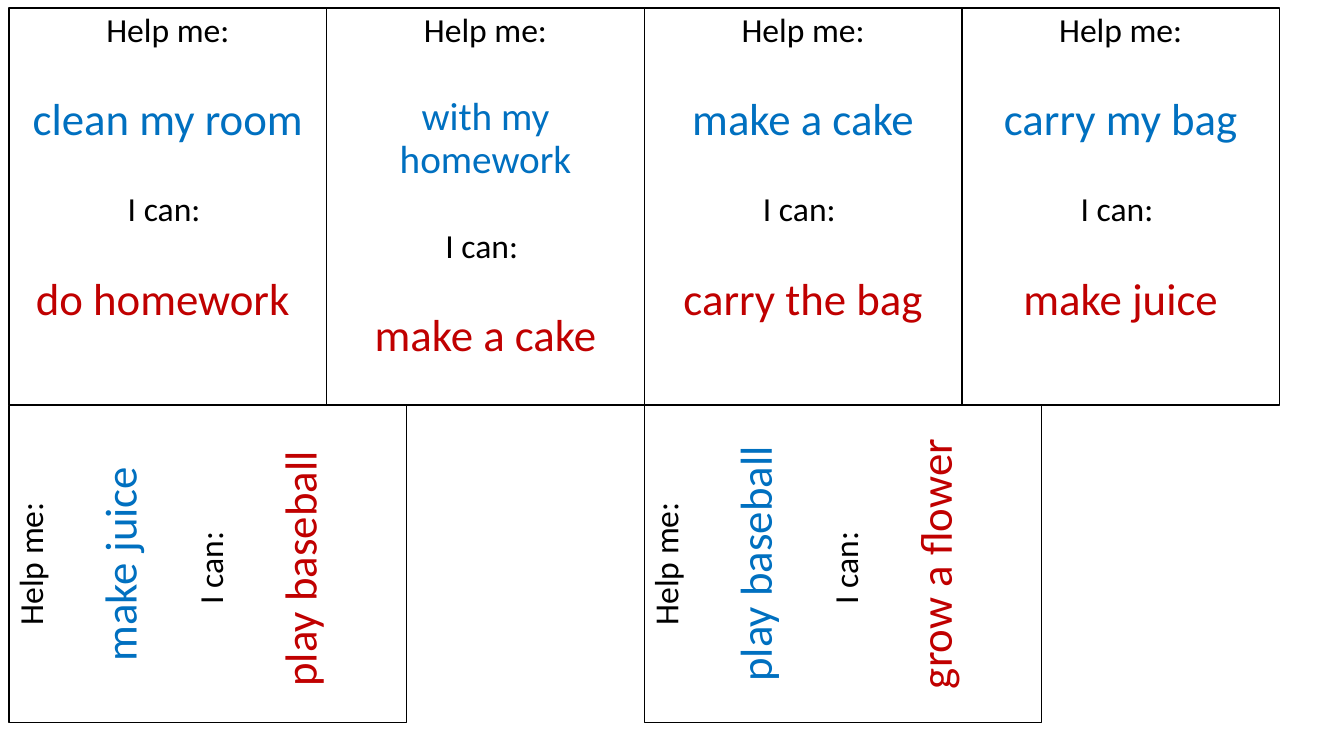
import pptx
import pptx.util
import pptx.dml.color
import pptx.enum.shapes
import pptx.enum.text

Inches = pptx.util.Inches
Pt = pptx.util.Pt

COLORS = {"paper": "FFFFFF", "ink": "000000", "request": "0070C0", "offer": "C00000"}

UPRIGHT_CARDS = [
    ("clean my room", 32, "do homework "),
    ("with my homework", 28, "make a cake"),
    ("make a cake", 32, "carry the bag"),
    ("carry my bag", 32, "make juice"),
]
TURNED_CARDS = [
    ("make juice", 32, "play baseball "),
    ("play baseball", 32, "grow a flower"),
]

LEFT, TOP = 0.09, 0.08
CARD_WIDTH, CARD_HEIGHT = 3.15, 3.94
TURN_SHIFT = (CARD_HEIGHT - CARD_WIDTH) / 2

FRAME_FORMAT = {
    "word_wrap": True,
    "auto_size": pptx.enum.text.MSO_AUTO_SIZE.NONE,
    "vertical_anchor": pptx.enum.text.MSO_ANCHOR.TOP,
}
LINE_FORMAT = {"alignment": pptx.enum.text.PP_ALIGN.CENTER, "line_spacing": 0.9}


def apply_format(target, values):
    for name, value in values.items():
        setattr(target, name, value)


def rgb(name):
    return pptx.dml.color.RGBColor.from_string(COLORS[name])


def add_card(slide, left, top, rotation, request, request_size, offer):
    card = slide.shapes.add_shape(
        pptx.enum.shapes.MSO_SHAPE.RECTANGLE,
        Inches(left), Inches(top), Inches(CARD_WIDTH), Inches(CARD_HEIGHT),
    )
    card.rotation = rotation
    card.shadow.inherit = False
    card.fill.solid()
    card.fill.fore_color.rgb = rgb("paper")
    card.line.color.rgb = rgb("ink")
    card.line.width = Pt(1)
    apply_format(card.text_frame, FRAME_FORMAT)

    wording = [
        ("Help me:", 24, "ink"),
        (request, request_size, "request"),
        ("I can: ", 24, "ink"),
        (offer, 32, "offer"),
    ]
    for index, (words, size, color) in enumerate(wording):
        line = card.text_frame.add_paragraph() if index else card.text_frame.paragraphs[0]
        apply_format(line, LINE_FORMAT | {"space_before": Pt(34 if index else 0)})
        run = line.add_run()
        run.text = words
        apply_format(run.font, {"name": "Calibri", "size": Pt(size)})
        run.font.color.rgb = rgb(color)


def main():
    deck = pptx.Presentation()
    apply_format(deck, {"slide_width": Inches(13.33), "slide_height": Inches(7.5)})
    slide = deck.slides.add_slide(deck.slide_layouts[6])

    for column, card in enumerate(UPRIGHT_CARDS):
        add_card(slide, LEFT + column * CARD_WIDTH, TOP, 0, *card)
    for column, card in enumerate(TURNED_CARDS):
        left = LEFT + column * 2 * CARD_WIDTH + TURN_SHIFT
        add_card(slide, left, TOP + CARD_HEIGHT - TURN_SHIFT, 270, *card)

    deck.save("out.pptx")


if __name__ == "__main__":
    main()
